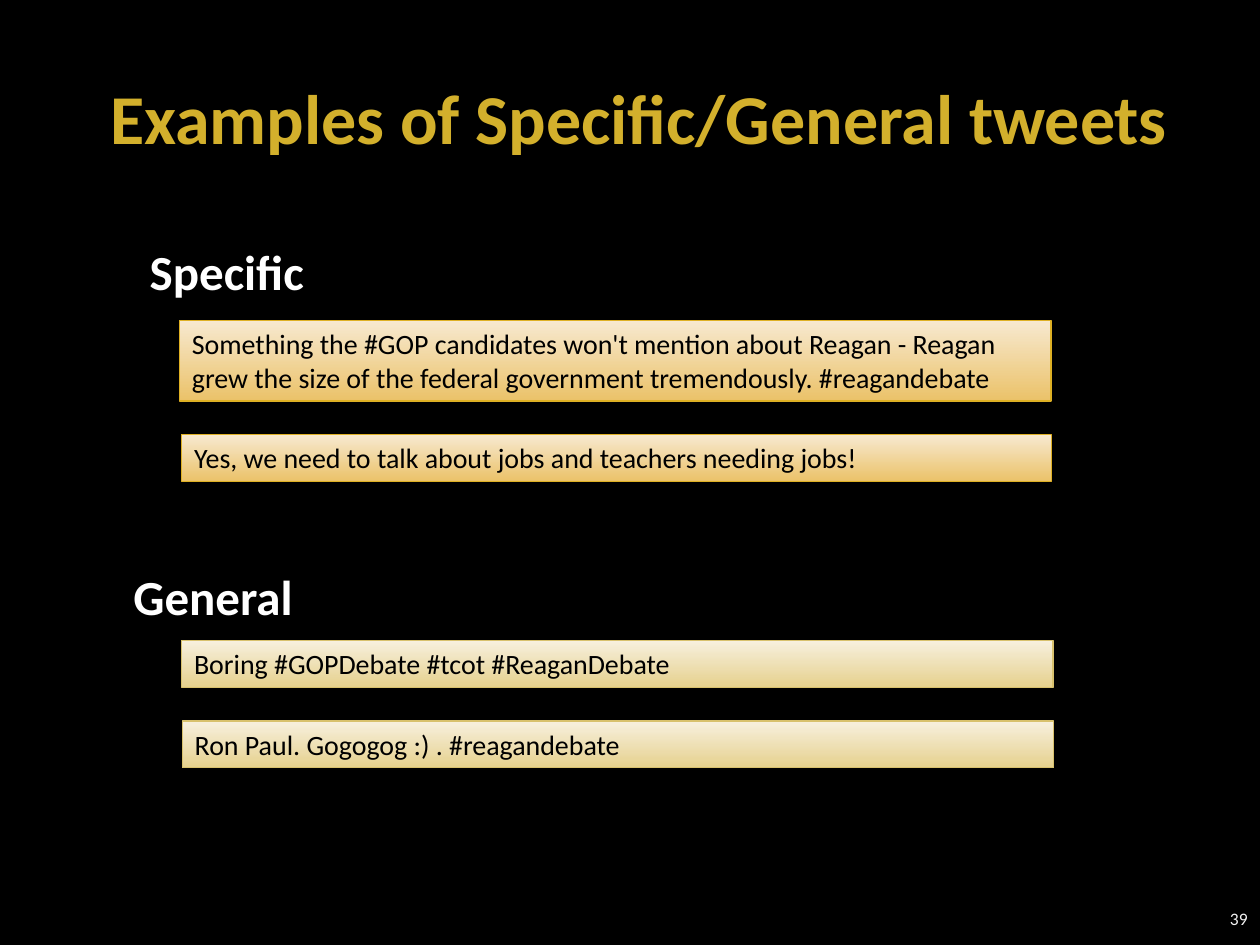
from pptx import Presentation
from pptx.dml.color import RGBColor
from pptx.enum import shapes, text
from pptx.util import Pt

TITLE = ("Examples of Specific/General tweets", (30, 21.6, 670, 90))
PAGE_NUMBER = ("39", (675, 510.5, 45, 28.8))
HEADINGS = [
    ("Specific", (78.5, 134.6, 116, 41)),
    ("General", (69.1, 320.4, 121, 41)),
]
SPECIFIC = ("F7E9D0", "EBC269", "DEB024")
GENERAL = ("F7F0DE", "E6D18E", "D8C16D")
TWEETS = [
    ("Something the #GOP candidates won't mention about Reagan - Reagan "
     "grew the size of the federal government tremendously. #reagandebate",
     (102.6, 183.1, 498, 46), SPECIFIC),
    ("Yes, we need to talk about jobs and teachers needing jobs!",
     (103.8, 248.4, 497, 26.7), SPECIFIC),
    ("Boring #GOPDebate #tcot #ReaganDebate",
     (103.8, 366, 498, 26.7), GENERAL),
    ("Ron Paul. Gogogog :) . #reagandebate",
     (104.2, 412.1, 498, 26.7), GENERAL),
]


def color(value):
    return RGBColor.from_string(value)


def points(place):
    return [Pt(length) for length in place]


def write(shape, words, size, shade, bold=False, wrap=True,
          align=text.PP_ALIGN.LEFT, anchor=text.MSO_ANCHOR.TOP):
    frame = shape.text_frame
    frame.text = words
    frame.word_wrap = wrap
    frame.vertical_anchor = anchor
    para = frame.paragraphs[0]
    para.alignment = align
    para.font.name = "Calibri"
    para.font.size = Pt(size)
    para.font.bold = bold
    para.font.color.rgb = color(shade)


def add_tweet(page, words, place, palette):
    box = page.shapes.add_shape(shapes.MSO_SHAPE.RECTANGLE, *points(place))
    box.shadow.inherit = False
    box.fill.gradient()
    box.fill.gradient_angle = 270
    *stop_colors, line_color = palette
    for stop, position, shade in zip(box.fill.gradient_stops, (0, 1), stop_colors):
        stop.position = position
        stop.color.rgb = color(shade)
    box.line.color.rgb = color(line_color)
    box.line.width = Pt(0.75)
    write(box, words, 16, "000000")


def main():
    deck = Presentation()
    deck.slide_width, deck.slide_height = Pt(720), Pt(540)
    page = deck.slides.add_slide(deck.slide_layouts[5])
    page.background.fill.solid()
    page.background.fill.fore_color.rgb = color("000000")

    words, place = TITLE
    title = page.shapes.title
    title.left, title.top, title.width, title.height = points(place)
    write(title, words, 40, "D3B02C", bold=True,
          align=text.PP_ALIGN.CENTER, anchor=text.MSO_ANCHOR.MIDDLE)

    words, place = PAGE_NUMBER
    number = page.shapes.add_textbox(*points(place))
    write(number, words, 10, "F2F2F2",
          align=text.PP_ALIGN.RIGHT, anchor=text.MSO_ANCHOR.MIDDLE)

    for words, place, palette in TWEETS:
        add_tweet(page, words, place, palette)
    for words, place in HEADINGS:
        heading = page.shapes.add_textbox(*points(place))
        write(heading, words, 28, "FFFFFF", bold=True, wrap=False)

    deck.save("out.pptx")


if __name__ == "__main__":
    main()
